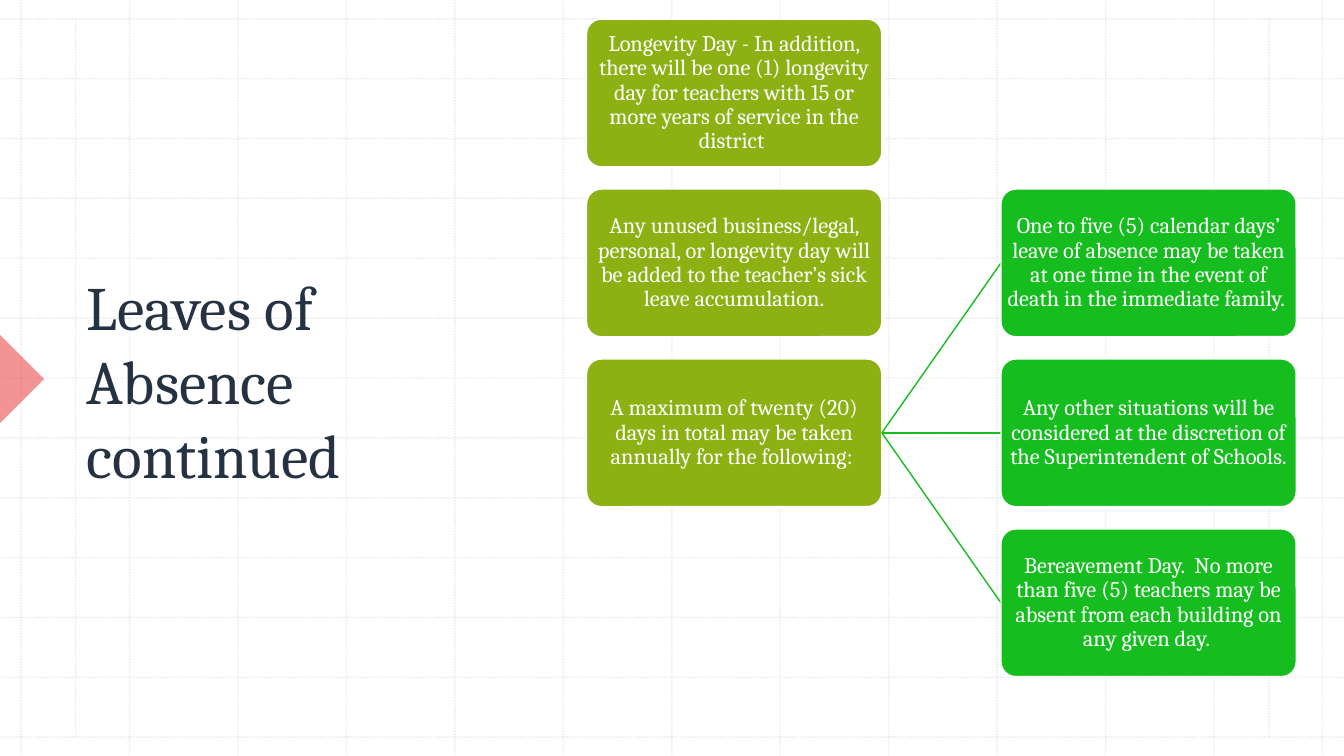
from lxml.etree import SubElement
from pptx import Presentation
from pptx.dml.color import RGBColor
from pptx.enum.dml import MSO_LINE
from pptx.enum.shapes import MSO_CONNECTOR, MSO_SHAPE
from pptx.enum.text import MSO_ANCHOR, PP_ALIGN
from pptx.oxml.ns import qn
from pptx.util import Pt

TITLE = "Leaves of Absence continued"
RULES = [
    "Longevity Day - In addition, there will be one (1) longevity day for teachers with 15 or more years of service in the district ",
    "Any unused business/legal, personal, or longevity day will be added to the teacher’s sick leave accumulation.",
    "A maximum of twenty (20) days in total may be taken annually for the following: ",
]
REASONS = [
    "One to five (5) calendar days’ leave of absence may be taken at one time in the event of death in the immediate family. ",
    "Any other situations will be considered at the discretion of the Superintendent of Schools.",
    "Bereavement Day.  No more than five (5) teachers may be absent from each building on any given day. ",
]
COLORS = {"grid": "BCBCBC", "marker": "E7292E", "title": "243241",
          "rule": "8DB013", "reason": "15BE1E", "white": "FFFFFF"}
FONT = "Cambria"
WIDTH, HEIGHT = 960, 540
GRID_X, GRID_Y, GRID_DX, GRID_DY, GRID_STEPS = 15.12, 13.5, 77.46, 42.75, 12
MARGIN_LINES = [54, 906.5]
BOX_W, BOX_H, BOX_TOP, BOX_DY = 210.9, 105.5, 13.65, 121.4
RULE_X, REASON_X = 419, 715


def rgb(name):
    return RGBColor.from_string(COLORS[name])


def set_alpha(el, percent):
    clr = next(el.iter(qn("a:srgbClr")))
    SubElement(clr, qn("a:alpha")).set("val", str(percent * 1000))


def add_line(x1, y1, x2, y2, color):
    cn = s.shapes.add_connector(MSO_CONNECTOR.STRAIGHT, Pt(x1), Pt(y1), Pt(x2), Pt(y2))
    cn.line.color.rgb = rgb(color)
    cn.line.width = Pt(1)
    SubElement(cn._element.spPr, qn("a:effectLst"))
    return cn


def add_grid_line(x1, y1, x2, y2):
    cn = add_line(x1, y1, x2, y2, "grid")
    cn.line.dash_style = MSO_LINE.ROUND_DOT
    set_alpha(cn._element.spPr, 30)


def write(sp, text, size, color):
    tf = sp.text_frame
    tf.word_wrap = True
    tf.vertical_anchor = MSO_ANCHOR.MIDDLE
    tf.text = text
    font = tf.paragraphs[0].runs[0].font
    font.name, font.size, font.color.rgb = FONT, Pt(size), rgb(color)
    return tf


def add_shape(kind, x, y, w, h, color):
    sp = s.shapes.add_shape(kind, Pt(x), Pt(y), Pt(w), Pt(h))
    sp.shadow.inherit = False
    sp.fill.solid()
    sp.fill.fore_color.rgb = rgb(color)
    return sp


def add_box(x, row, text, color):
    sp = add_shape(MSO_SHAPE.ROUNDED_RECTANGLE, x, BOX_TOP + row * BOX_DY, BOX_W, BOX_H, color)
    sp.adjustments[0] = 0.1
    sp.line.color.rgb = rgb("white")
    sp.line.width = Pt(1)
    tf = write(sp, text, 16, "white")
    tf.margin_left = tf.margin_right = tf.margin_top = tf.margin_bottom = Pt(0.72)
    p = tf.paragraphs[0]
    p.alignment = PP_ALIGN.CENTER
    p.line_spacing = 0.9


def middle(row):
    return BOX_TOP + row * BOX_DY + BOX_H / 2


prs = Presentation()
prs.slide_width, prs.slide_height = Pt(WIDTH), Pt(HEIGHT)
s = prs.slides.add_slide(prs.slide_layouts[6])

for i in range(GRID_STEPS + 1):
    x, y = GRID_X + i * GRID_DX, GRID_Y + i * GRID_DY
    add_grid_line(x, 0, x, HEIGHT)
    add_grid_line(0, y, WIDTH, y)
for x in MARGIN_LINES:
    add_grid_line(x, GRID_Y, x, GRID_Y + GRID_STEPS * GRID_DY)

marker = add_shape(MSO_SHAPE.RIGHT_TRIANGLE, -22.3, 248.4, 44.6, 44.6, "marker")
marker.rotation = 225
marker.line.fill.background()
set_alpha(marker._element.spPr, 50)

title = s.shapes.add_textbox(Pt(54.7), Pt(56.9), Pt(270), Pt(428.4))
write(title, TITLE, 44, "title")

for row, text in enumerate(RULES):
    add_box(RULE_X, row, text, "rule")
last = len(RULES) - 1
for row, text in enumerate(REASONS, start=1):
    add_line(RULE_X + BOX_W, middle(last), REASON_X, middle(row), "reason")
    add_box(REASON_X, row, text, "reason")

prs.save("out.pptx")
